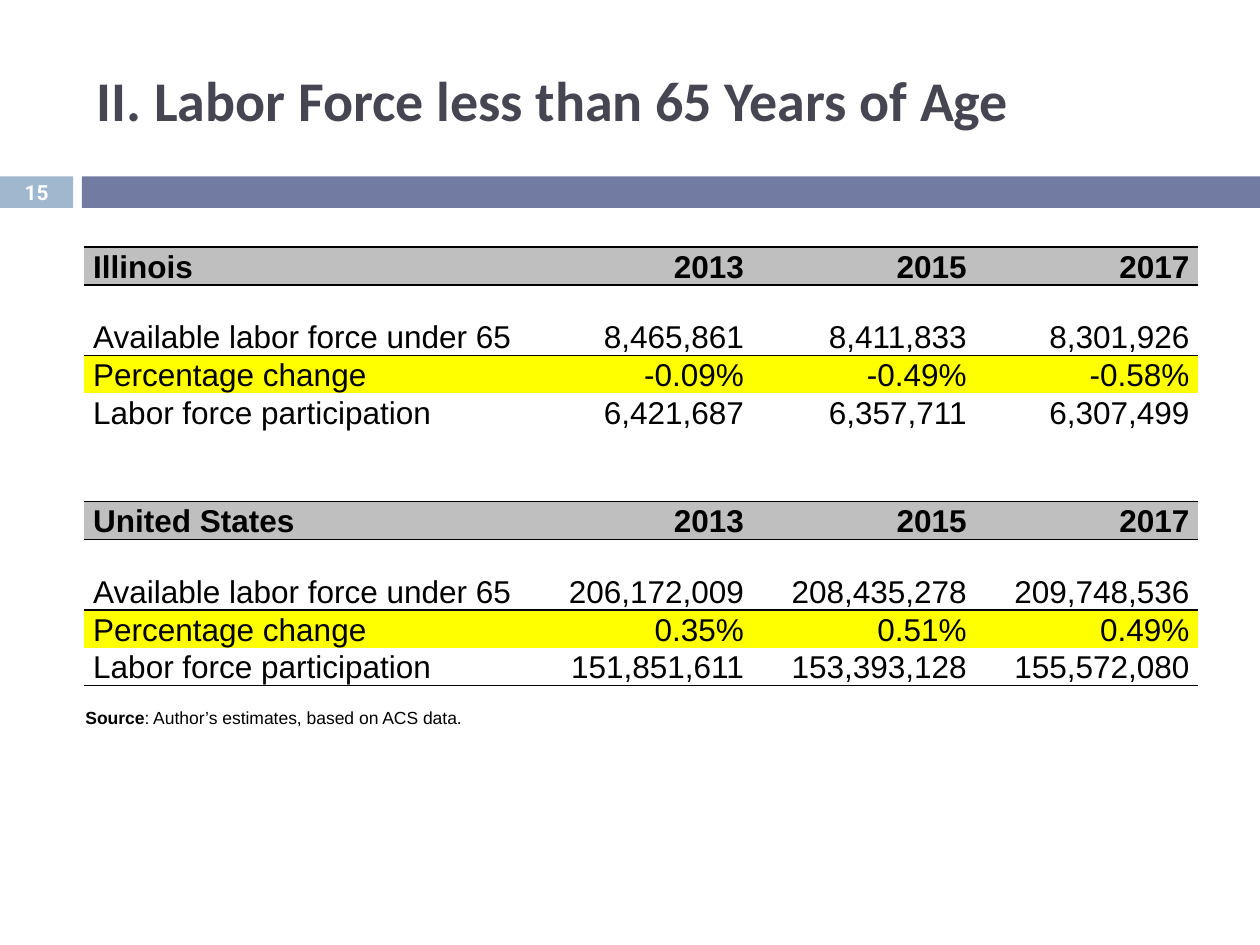
import pptx
import pptx.dml.color
import pptx.enum.shapes
import pptx.enum.text
import pptx.oxml
import pptx.oxml.ns
import pptx.util
from dataclasses import dataclass

RGBColor = pptx.dml.color.RGBColor
BLACK = RGBColor(0x00, 0x00, 0x00)
WHITE = RGBColor(0xFF, 0xFF, 0xFF)
SLATE = RGBColor(0x46, 0x46, 0x53)
SKY = RGBColor(0x9F, 0xB8, 0xCD)
INDIGO = RGBColor(0x72, 0x7C, 0xA3)
GREY = RGBColor(0xBF, 0xBF, 0xBF)
YELLOW = RGBColor(0xFF, 0xFF, 0x00)

ALIGN = pptx.enum.text.PP_ALIGN
ANCHOR = pptx.enum.text.MSO_ANCHOR
GRID_COLUMNS, GRID_ROWS = 100, 75
SLIDE_WIDTH, SLIDE_HEIGHT = pptx.util.Inches(10), pptx.util.Inches(7.5)
NO_STYLE = "{2D5ABB26-0587-4C30-8999-92F81FD0307C}"
COLUMN_SHARES = (2, 1, 1, 1)
TABLE_LINE = 2.8


@dataclass(frozen=True)
class Area:
    column: float
    row: float
    columns: float
    rows: float

    def lengths(self) -> tuple:
        return (across(self.column), down(self.row), across(self.columns), down(self.rows))


@dataclass(frozen=True)
class TableRow:
    values: tuple = ("",) * len(COLUMN_SHARES)
    lines: int = 1
    fill: RGBColor | None = None
    bold: bool = False
    borders: str = ""


@dataclass(frozen=True)
class Label:
    area: Area
    spans: tuple
    font: dict
    align: ALIGN = ALIGN.LEFT
    frame: dict | None = None


def across(columns: float) -> int:
    return round(SLIDE_WIDTH * columns / GRID_COLUMNS)


def down(rows: float) -> int:
    return round(SLIDE_HEIGHT * rows / GRID_ROWS)


def apply(target, formats: dict) -> None:
    for name, value in formats.items():
        setattr(target, name, value)


def font_format(name: str, size: float) -> dict:
    return {"name": name, "size": pptx.util.Pt(size)}


def add_span(para, text: str, color: RGBColor, formats: dict) -> None:
    span = para.add_run()
    span.text = text
    apply(span.font, formats)
    span.font.color.rgb = color


def add_bar(page, area: Area, color: RGBColor) -> None:
    bar = page.shapes.add_shape(pptx.enum.shapes.MSO_SHAPE.RECTANGLE, *area.lengths())
    bar.shadow.inherit = False
    bar.fill.solid()
    bar.fill.fore_color.rgb = color
    bar.line.fill.background()


def add_label(page, label: Label, color: RGBColor) -> None:
    box = page.shapes.add_textbox(*label.area.lengths())
    apply(box.text_frame, {"word_wrap": True, "vertical_anchor": ANCHOR.MIDDLE} | (label.frame or {}))
    para = box.text_frame.paragraphs[0]
    para.alignment = label.align
    for text, bold in label.spans:
        add_span(para, text, color, label.font | {"bold": bold})


def add_border(cell, side: str) -> None:
    line = pptx.oxml.parse_xml(
        f'<a:ln{side} {pptx.oxml.ns.nsdecls("a")} w="{pptx.util.Pt(1)}">'
        f'<a:solidFill><a:srgbClr val="{BLACK}"/></a:solidFill></a:ln{side}>'
    )
    cell._tc.get_or_add_tcPr().append(line)


def fill_cell(cell, row: TableRow, column: int) -> None:
    inset = pptx.util.Inches(0.07)
    apply(cell, {"margin_left": inset, "margin_right": inset, "margin_top": 0,
                 "margin_bottom": 0, "vertical_anchor": ANCHOR.BOTTOM})
    for side in row.borders:
        add_border(cell, side)
    if row.fill is None:
        cell.fill.background()
    else:
        cell.fill.solid()
        cell.fill.fore_color.rgb = row.fill
    para = cell.text_frame.paragraphs[0]
    para.alignment = ALIGN.RIGHT if column else ALIGN.LEFT
    text = row.values[column]
    if text:
        add_span(para, text, BLACK, font_format("Arial", 18) | {"bold": row.bold})
    else:
        para._p.append(pptx.oxml.parse_xml(f'<a:endParaRPr {pptx.oxml.ns.nsdecls("a")} sz="1200"/>'))


def region(name: str, available: tuple, change: tuple, participation: tuple) -> list[TableRow]:
    return [
        TableRow((name, "2013", "2015", "2017"), fill=GREY, bold=True, borders="TB"),
        TableRow(("Available labor force under 65", *available), lines=2, borders="T"),
        TableRow(("Percentage change", *change), fill=YELLOW),
        TableRow(("Labor force participation", *participation)),
    ]


def add_labor_table(page, area: Area, rows: list[TableRow]) -> None:
    frame = page.shapes.add_table(len(rows), len(COLUMN_SHARES), *area.lengths())
    table = frame.table
    apply(table, {"first_row": False, "horz_banding": False})
    table._tbl.tblPr.find(pptx.oxml.ns.qn("a:tableStyleId")).text = NO_STYLE
    for column, share in zip(table.columns, COLUMN_SHARES):
        column.width = across(area.columns * share / sum(COLUMN_SHARES))
    for index, row in enumerate(rows):
        table.rows[index].height = down(TABLE_LINE * row.lines)
        for column in range(len(COLUMN_SHARES)):
            fill_cell(table.cell(index, column), row, column)


def main() -> None:
    deck = pptx.Presentation()
    apply(deck, {"slide_width": SLIDE_WIDTH, "slide_height": SLIDE_HEIGHT})
    page = deck.slides.add_slide(deck.slide_layouts[6])

    add_bar(page, Area(0, 14, 5.8, 2.5), SKY)
    add_bar(page, Area(6.5, 14, 93.5, 2.5), INDIGO)
    title = Label(Area(6.7, 2.5, 91, 10.8), (("II. Labor Force less than 65 Years of Age", True),),
                  font_format("Calibri", 32))
    number = Label(Area(0, 13.9, 5.8, 2.7), (("15", True),), font_format("Roboto", 11.9), ALIGN.CENTER,
                   {"margin_top": 0, "margin_bottom": 0})
    source = Label(Area(5.8, 55.6, 32.6, 2.7),
                   (("Source", True), (": Author’s estimates, based on ACS data.", False)),
                   font_format("Arial", 10), frame={"word_wrap": False, "vertical_anchor": ANCHOR.TOP})
    add_label(page, title, SLATE)
    add_label(page, number, WHITE)

    illinois = region("Illinois", ("8,465,861", "8,411,833", "8,301,926"),
                      ("-0.09%", "-0.49%", "-0.58%"), ("6,421,687", "6,357,711", "6,307,499"))
    nation = region("United States", ("206,172,009", "208,435,278", "209,748,536"),
                    ("0.35%", "0.51%", "0.49%"), ("151,851,611", "153,393,128", "155,572,080"))
    closing = TableRow(nation.pop().values, borders="B")
    rows = [*illinois, TableRow(), TableRow(borders="B"), *nation, closing]
    height = TABLE_LINE * sum(row.lines for row in rows)
    add_labor_table(page, Area(6.7, 19.6, 88.4, height), rows)
    add_label(page, source, BLACK)
    deck.save("out.pptx")


if __name__ == "__main__":
    main()
